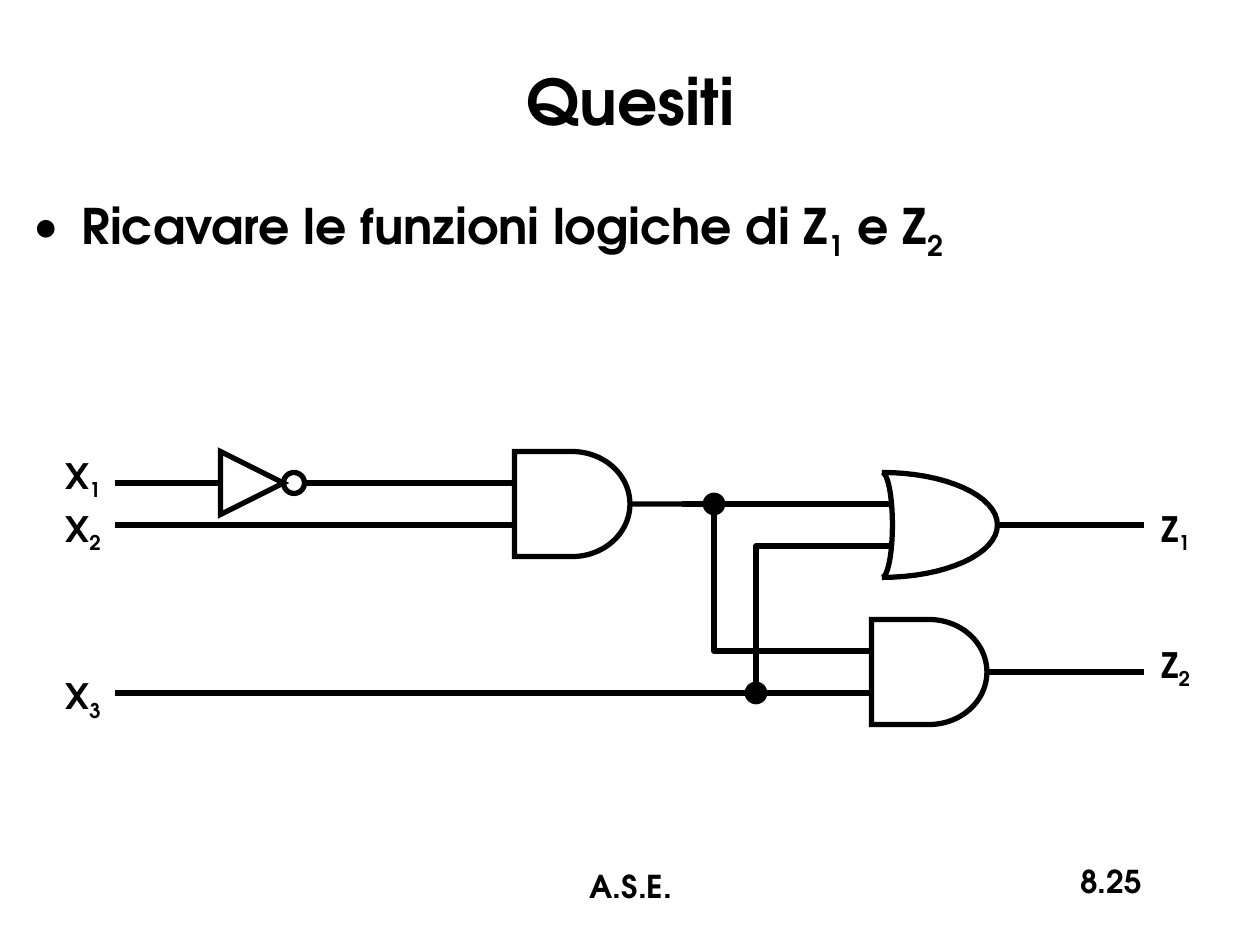
from math import cos, pi, sin

from lxml.etree import SubElement
from pptx import Presentation
from pptx.dml.color import RGBColor
from pptx.enum.shapes import MSO_CONNECTOR, MSO_SHAPE
from pptx.enum.text import MSO_ANCHOR, PP_ALIGN
from pptx.oxml.ns import qn
from pptx.util import Inches, Pt

BLACK = RGBColor(0, 0, 0)
FONT = "TeX Gyre Adventor"
UNIT = 1 / 12
LEAD = 6
CENTER, MIDDLE = PP_ALIGN.CENTER, MSO_ANCHOR.MIDDLE

TITLE = [("Quesiti", "")]
BODY = [("Ricavare le funzioni logiche di Z", "1"), (" e Z", "2")]
LABELS = [
    ("X", "1", 0.42, 3.58, 0.48),
    ("X", "2", 0.42, 4, 0.48),
    ("X", "3", 0.42, 5.33, 0.48),
    ("Z", "1", 9.08, 4, 0.5),
    ("Z", "2", 9.08, 5.08, 0.5),
]

AND_GATES = [(49, 43), (83, 59)]
OR_GATE = (84, 50)
WIRES = [
    ((11, 46), (18, 46)),
    ((18, 46), (21, 46)),
    ((29, 46), (32, 46)),
    ((32, 46), (43, 46)),
    ((11, 50), (44, 50)),
    ((65, 48), (79, 48)),
    ((11, 66), (77, 66)),
    ((101, 50), (109, 50)),
    ((100, 64), (109, 64)),
]
BENDS = [
    [(68, 48), (68, 62), (77, 62)],
    [(72, 66), (72, 52), (79, 52)],
]
DOTS = [(68, 48), (72, 66)]

deck = Presentation()
deck.slide_width, deck.slide_height = Inches(10), Inches(7.5)
slide = deck.slides.add_slide(deck.slide_layouts[6])
shapes = slide.shapes


def grid(*nums):
    return [Inches(n * UNIT) for n in nums]


def write(parts, box, size, align=CENTER, anchor=MSO_ANCHOR.TOP, wrap=True, bullet=False):
    frame = shapes.add_textbox(*map(Inches, box)).text_frame
    frame.word_wrap = wrap
    frame.vertical_anchor = anchor
    para = frame.paragraphs[0]
    para.alignment = align
    if bullet:
        props = para._p.get_or_add_pPr()
        props.set("marL", str(Inches(0.38)))
        props.set("indent", str(-Inches(0.38)))
        SubElement(props, qn("a:buFont")).set("typeface", FONT)
        SubElement(props, qn("a:buChar")).set("char", "•")
    font = para.font
    font.name, font.size, font.bold = FONT, Pt(size), True
    font.color.rgb = BLACK
    for text, sub in parts:
        para.add_run().text = text
        if sub:
            run = para.add_run()
            run.text = sub
            run.font._element.set("baseline", "-25000")


def style(shape, width=3, solid=False, miter=False):
    shape.shadow.inherit = False
    if solid:
        shape.fill.solid()
        shape.fill.fore_color.rgb = BLACK
    else:
        shape.fill.background()
    shape.line.color.rgb = BLACK
    shape.line.width = Pt(width)
    if miter:
        SubElement(shape.line._get_or_add_ln(), qn("a:miter")).set("lim", "800000")
    return shape


def draw(kind, x, y, w, h, **look):
    return style(shapes.add_shape(kind, *grid(x, y, w, h)), **look)


def trace(points):
    spots = [grid(*point) for point in points]
    path = shapes.build_freeform(*spots[0], scale=1.0)
    path.add_line_segments(spots[1:], close=False)
    style(path.convert_to_shape())


def wire(start, end):
    line = shapes.add_connector(MSO_CONNECTOR.STRAIGHT, *grid(*start, *end))
    line.line.color.rgb = BLACK
    line.line.width = Pt(3)
    SubElement(line._element.spPr, qn("a:effectLst"))
    return line


def arc(x, y, wide, high, steps=16):
    turns = [pi / 2 * i / steps for i in range(steps + 1)]
    return [(x + wide * sin(t), y + high * cos(t)) for t in turns]


def leads(tip, left, right, y):
    for row in (y - 2, y + 2):
        wire((tip, row), (tip - LEAD, row))
    return wire((right, y), (right + LEAD, y))


write(TITLE, (0.17, 0.17, 9.67, 1.25), 36, anchor=MIDDLE)
write(BODY, (0.17, 1.5, 9.67, 5.17), 28, align=PP_ALIGN.LEFT, bullet=True)

x, y = OR_GATE
for wide in (11, 1):
    for high in (-5, 5):
        trace(arc(x, y, wide, high))
leads(x + 1, x, x + 11, y)

draw(MSO_SHAPE.ISOSCELES_TRIANGLE, 21, 43, 6, 6, miter=True).rotation = 90
draw(MSO_SHAPE.OVAL, 27, 45, 2, 2)

for x, y in AND_GATES:
    gate = draw(MSO_SHAPE.FLOWCHART_DELAY, x, y, 11, 10, miter=True)
    leads(x, x, x + 11, y + 5).begin_connect(gate, 3)

for start, end in WIRES:
    wire(start, end)
for bend in BENDS:
    trace(bend)
for x, y in DOTS:
    draw(MSO_SHAPE.OVAL, x - 1, y - 1, 2, 2, width=1, solid=True)

for name, sub, x, y, w in LABELS:
    write([(name, sub)], (x, y, w, 0.43), 20, anchor=MIDDLE, wrap=False)

write([("A.S.E.", "")], (3.42, 6.83, 3.17, 0.5), 18)
write([("8.25", "")], (7.08, 6.79, 2.08, 0.5), 18, align=PP_ALIGN.RIGHT)

deck.save("out.pptx")
